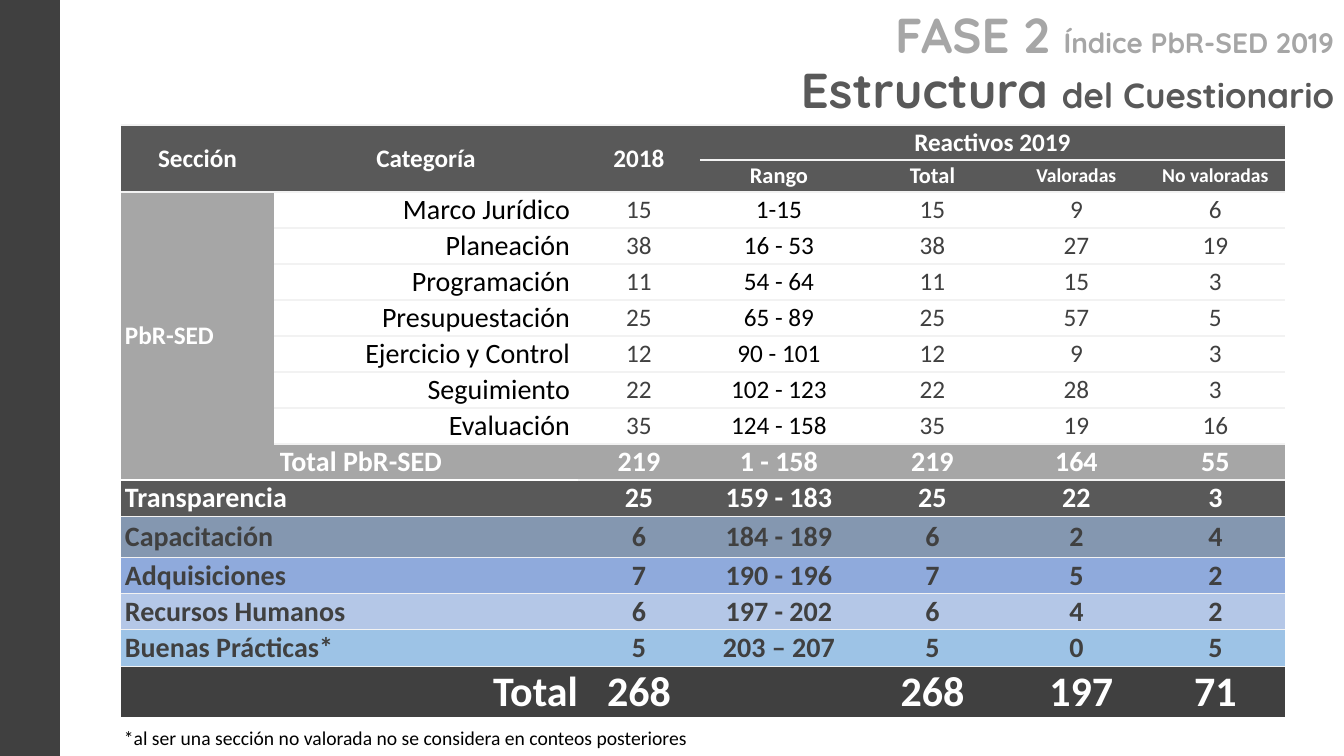
import pptx
import pptx.util
import pptx.dml.color
import pptx.enum.shapes
import pptx.enum.text
import pptx.oxml
import pptx.oxml.ns

RGBColor = pptx.dml.color.RGBColor
ALIGN = pptx.enum.text.PP_ALIGN
LEFT, MID, RIGHT = ALIGN.LEFT, ALIGN.CENTER, ALIGN.RIGHT
SCALE = 914400 / 100.8

WHITE = RGBColor(0xFF, 0xFF, 0xFF)
BLACK = RGBColor(0, 0, 0)
DARK = RGBColor(0x40, 0x40, 0x40)
SLATE = RGBColor(0x59, 0x59, 0x59)
GRAY = RGBColor(0xA6, 0xA6, 0xA6)
PALE = RGBColor(0xF2, 0xF2, 0xF2)
STEEL = RGBColor(0x84, 0x97, 0xB0)
BLUE = RGBColor(0x8F, 0xAA, 0xDC)
LILAC = RGBColor(0xB4, 0xC7, 0xE7)
SKY = RGBColor(0x9D, 0xC3, 0xE6)

PLAIN = "{2D5ABB26-0587-4C30-8999-92F81FD0307C}"
WIDTHS = [153, 304, 122, 158, 149, 139, 139]
HEIGHTS = [35, 32] + [36] * 8 + [37, 41, 36, 36, 37, 49]

TOPICS = [
    ("Marco Jurídico", "15", "1-15", "15", "9", "6"),
    ("Planeación", "38", "16 - 53", "38", "27", "19"),
    ("Programación", "11", "54 - 64", "11", "15", "3"),
    ("Presupuestación", "25", "65 - 89", "25", "57", "5"),
    ("Ejercicio y Control", "12", "90 - 101", "12", "9", "3"),
    ("Seguimiento", "22", "102 - 123", "22", "28", "3"),
    ("Evaluación", "35", "124 - 158", "35", "19", "16"),
]
PARTS = [
    (SLATE, WHITE, ("Transparencia", "25", "159 - 183", "25", "22", "3")),
    (STEEL, DARK, ("Capacitación", "6", "184 - 189", "6", "2", "4")),
    (BLUE, DARK, ("Adquisiciones", "7", "190 - 196", "7", "5", "2")),
    (LILAC, DARK, ("Recursos Humanos", "6", "197 - 202", "6", "4", "2")),
    (SKY, DARK, ("Buenas Prácticas*", "5", "203 – 207", "5", "0", "5")),
]


def px(n):
    return pptx.util.Emu(round(n * SCALE))


def write(para, text, size=18, color=WHITE, bold=True, face="Calibri", align=MID):
    para.alignment = align
    run = para.add_run()
    run.text = text
    font = run.font
    font.name, font.bold, font.size = face, bold, pptx.util.Pt(size)
    font.color.rgb = color


def add_box(slide, x, y, w, h):
    frame = slide.shapes.add_textbox(px(x), px(y), px(w), px(h)).text_frame
    frame.word_wrap = True
    return frame.paragraphs[0]


def add_title(slide, spot, color, pairs):
    para = add_box(slide, *spot)
    for text, size in pairs:
        write(para, text, size=size, color=color, face="Quicksand", align=RIGHT)


def add_bar(slide):
    kind = pptx.enum.shapes.MSO_SHAPE.RECTANGLE
    bar = slide.shapes.add_shape(kind, 0, 0, px(60), px(756))
    bar.shadow.inherit = False
    bar.fill.solid()
    bar.fill.fore_color.rgb = DARK
    bar.line.fill.background()


def edge(cell, side, color):
    space = pptx.oxml.ns.nsdecls("a")
    line = (f'<a:ln{side} {space} w="12700"><a:solidFill>'
            f'<a:srgbClr val="{color}"/></a:solidFill></a:ln{side}>')
    cell._tc.get_or_add_tcPr().append(pptx.oxml.parse_xml(line))


def put(cell, text, fill, left=0, right=0, top=PALE, base=PALE, **style):
    for side, color in (("T", top), ("B", base)):
        if color is not None:
            edge(cell, side, color)
    cell.fill.solid()
    cell.fill.fore_color.rgb = fill
    cell.margin_left, cell.margin_right = px(left), px(right)
    cell.margin_top = cell.margin_bottom = 0
    cell.vertical_anchor = pptx.enum.text.MSO_ANCHOR.MIDDLE
    if text:
        write(cell.text_frame.paragraphs[0], text, **style)


def add_head(grid):
    for col, text in enumerate(("Sección", "Categoría", "2018")):
        grid.cell(0, col).merge(grid.cell(1, col))
        put(grid.cell(0, col), text, SLATE)
    grid.cell(0, 3).merge(grid.cell(0, 6))
    put(grid.cell(0, 3), "Reactivos 2019", SLATE)
    heads = (("Rango", 16), ("Total", 16), ("Valoradas", 14), ("No valoradas", 14))
    for col, (text, size) in enumerate(heads, 3):
        put(grid.cell(1, col), text, SLATE, size=size)


def add_topics(grid):
    grid.cell(2, 0).merge(grid.cell(9, 0))
    put(grid.cell(2, 0), "PbR-SED", GRAY, left=4, base=WHITE, align=LEFT)
    for row, (name, *data) in enumerate(TOPICS, 2):
        put(grid.cell(row, 1), name, WHITE, right=8, size=20, color=BLACK,
            bold=False, align=RIGHT)
        for col, text in enumerate(data, 2):
            put(grid.cell(row, col), text, WHITE, bold=False,
                color=BLACK if col == 3 else DARK)
    put(grid.cell(9, 1), "Total PbR-SED", GRAY, left=6, size=20, align=LEFT)
    for col, text in enumerate(("219", "1 - 158", "219", "164", "55"), 2):
        put(grid.cell(9, col), text, GRAY, size=20)


def add_parts(grid):
    for row, (fill, color, (name, *data)) in enumerate(PARTS, 10):
        last = row == 14
        grid.cell(row, 0).merge(grid.cell(row, 1))
        put(grid.cell(row, 0), name, fill, left=4, size=20, color=color,
            align=LEFT, top=WHITE if row == 10 else PALE,
            base=None if last else PALE)
        for col, text in enumerate(data, 2):
            put(grid.cell(row, col), text, fill, size=20, color=color,
                base=None if last and col < 4 else PALE)


def add_sum(grid):
    grid.cell(15, 0).merge(grid.cell(15, 1))
    put(grid.cell(15, 0), "Total", DARK, size=30, align=RIGHT, top=None, base=None)
    for col, text in enumerate(("268", "", "268", "197", "71"), 2):
        put(grid.cell(15, col), text, DARK, size=30, left=10 if col == 5 else 0,
            top=PALE if col > 3 else None, base=None)


def add_grid(slide):
    shape = slide.shapes.add_table(len(HEIGHTS), len(WIDTHS), px(121), px(125),
                                   px(sum(WIDTHS)), px(sum(HEIGHTS)))
    grid = shape.table
    grid.first_row = grid.horz_banding = False
    shape._element.find(".//" + pptx.oxml.ns.qn("a:tableStyleId")).text = PLAIN
    for col, width in zip(grid.columns, WIDTHS):
        col.width = px(width)
    for row, height in zip(grid.rows, HEIGHTS):
        row.height = px(height)
    add_head(grid)
    add_topics(grid)
    add_parts(grid)
    add_sum(grid)


def main():
    deck = pptx.Presentation()
    deck.slide_width, deck.slide_height = px(1344), px(756)
    slide = deck.slides.add_slide(deck.slide_layouts[6])
    add_bar(slide)
    add_title(slide, (389, 0, 955, 72), GRAY,
              (("FASE 2 ", 35), ("Índice PbR-SED 2019", 20)))
    add_title(slide, (654, 55, 690, 70), SLATE,
              (("Estructura ", 35), ("del Cuestionario", 25)))
    add_grid(slide)
    write(add_box(slide, 114, 721, 606, 34),
          "*al ser una sección no valorada no se considera en conteos posteriores",
          size=14, color=BLACK, bold=False, align=LEFT)
    deck.save("out.pptx")


if __name__ == "__main__":
    main()
